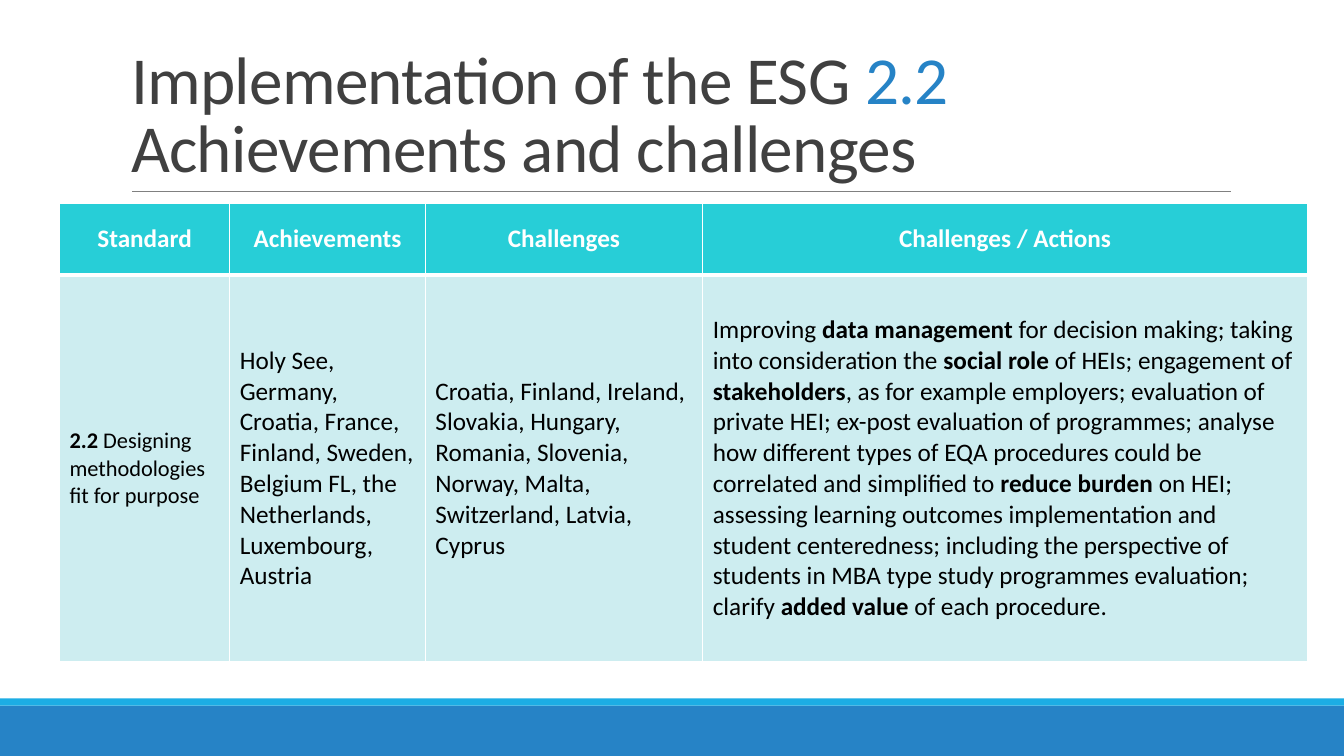
from dataclasses import dataclass

from lxml import etree
from pptx import Presentation
from pptx.dml.color import RGBColor
from pptx.enum.shapes import MSO_CONNECTOR, MSO_SHAPE
from pptx.enum.text import MSO_ANCHOR, MSO_AUTO_SIZE, PP_ALIGN
from pptx.oxml.ns import qn
from pptx.util import Cm, Pt

RECT = MSO_SHAPE.RECTANGLE
STRAIGHT = MSO_CONNECTOR.STRAIGHT
MIDDLE, BOTTOM = MSO_ANCHOR.MIDDLE, MSO_ANCHOR.BOTTOM
LEFT, CENTER = PP_ALIGN.LEFT, PP_ALIGN.CENTER
NO_FIT = MSO_AUTO_SIZE.NONE


@dataclass(frozen=True)
class Theme:
    font: str = "Calibri"
    title: str = "404040"
    blue: str = "2683C6"
    sky: str = "1CADE4"
    rule: str = "808080"
    header: str = "27CED7"
    body: str = "CDEDF0"
    white: str = "FFFFFF"
    black: str = "000000"
    title_size: float = 48
    text_size: float = 18
    label_size: float = 16
    thin: float = 1
    thick: float = 3


@dataclass(frozen=True)
class Band:
    top: float
    height: float
    color: str


@dataclass(frozen=True)
class Span:
    text: str
    bold: bool = False


@dataclass(frozen=True)
class Column:
    width: float
    heading: str
    body: list[Span]
    size: float


THEME = Theme()
SLIDE_W, SLIDE_H = 33.87, 19.05
BANDS = [Band(17.78, 1.27, THEME.blue), Band(17.6, 0.18, THEME.sky)]
TITLE = [
    ("Implementation of the ESG ", THEME.title),
    ("2.2", THEME.blue),
    (" Achievements and challenges", THEME.title),
]
ROW_HEIGHTS = [1.8, 9.75]
COLUMNS = [
    Column(4.29, "Standard", [
        Span("2.2 ", True),
        Span("Designing methodologies fit for purpose"),
    ], THEME.label_size),
    Column(4.93, "Achievements", [
        Span("Holy See, Germany, Croatia, France, Finland, Sweden, "
             "Belgium FL, the Netherlands, Luxembourg, Austria"),
    ], THEME.text_size),
    Column(6.99, "Challenges", [
        Span("Croatia, Finland, Ireland, Slovakia, Hungary, Romania, "
             "Slovenia, Norway, Malta, Switzerland, Latvia, Cyprus"),
    ], THEME.text_size),
    Column(15.24, "Challenges / Actions", [
        Span("Improving "),
        Span("data management ", True),
        Span("for decision making; taking into consideration the "),
        Span("social role ", True),
        Span("of HEIs; engagement of "),
        Span("stakeholders", True),
        Span(", as for example employers; evaluation of private HEI; "
             "ex-post evaluation of programmes; analyse how different types "
             "of EQA procedures could be correlated and simplified to "),
        Span("reduce burden ", True),
        Span("on HEI; assessing learning outcomes implementation and student "
             "centeredness; including the perspective of students in MBA type "
             "study programmes evaluation; clarify "),
        Span("added value ", True),
        Span("of each procedure."),
    ], THEME.text_size),
]


def add_run(p, text: str, size: float, color: str, bold: bool = False):
    r = p.add_run()
    r.text = text
    r.font.name = THEME.font
    r.font.size = Pt(size)
    r.font.bold = bold
    r.font.color.rgb = RGBColor.from_string(color)
    return r


def add_band(s, band: Band) -> None:
    sp = s.shapes.add_shape(RECT, 0, Cm(band.top), Cm(SLIDE_W), Cm(band.height))
    sp.shadow.inherit = False
    sp.fill.solid()
    sp.fill.fore_color.rgb = RGBColor.from_string(band.color)
    sp.line.fill.background()


def add_rule(s) -> None:
    line = s.shapes.add_connector(STRAIGHT, Cm(3.33), Cm(4.83), Cm(31.01), Cm(4.83))
    line.line.color.rgb = RGBColor.from_string(THEME.rule)
    line.line.width = Pt(0.5)
    etree.SubElement(line._element.spPr, qn("a:effectLst"))


def fill_title(s) -> None:
    sp = s.shapes.title
    sp.left, sp.top, sp.width, sp.height = Cm(3.05), Cm(0.79), Cm(27.94), Cm(4.04)
    tf = sp.text_frame
    tf.word_wrap = True
    tf.auto_size = NO_FIT
    tf.vertical_anchor = BOTTOM
    p = tf.paragraphs[0]
    p.alignment = LEFT
    p.line_spacing = 0.85
    for text, color in TITLE:
        r = add_run(p, text, THEME.title_size, color)
        r.font._element.set("spc", "-50")


def set_borders(cell, top: float, bottom: float) -> None:
    tc_pr = cell._tc.get_or_add_tcPr()
    widths = {"lnL": THEME.thin, "lnR": THEME.thin, "lnT": top, "lnB": bottom}
    for tag, width in widths.items():
        ln = etree.SubElement(tc_pr, qn(f"a:{tag}"), w=str(Pt(width)))
        fill = etree.SubElement(ln, qn("a:solidFill"))
        etree.SubElement(fill, qn("a:srgbClr"), val=THEME.white)


def fill_cell(cell, spans: list[Span], size: float, color: str, fill: str,
              align: PP_ALIGN) -> None:
    cell.vertical_anchor = MIDDLE
    cell.fill.solid()
    cell.fill.fore_color.rgb = RGBColor.from_string(fill)
    p = cell.text_frame.paragraphs[0]
    p.alignment = align
    for span in spans:
        add_run(p, span.text, size, color, span.bold)


def add_standards_table(s) -> None:
    width = sum(col.width for col in COLUMNS)
    table = s.shapes.add_table(len(ROW_HEIGHTS), len(COLUMNS), Cm(1.5), Cm(5.13),
                               Cm(width), Cm(sum(ROW_HEIGHTS))).table
    for row, height in zip(table.rows, ROW_HEIGHTS):
        row.height = Cm(height)
    for i, col in enumerate(COLUMNS):
        table.columns[i].width = Cm(col.width)
        head, body = table.cell(0, i), table.cell(1, i)
        set_borders(head, THEME.thin, THEME.thick)
        set_borders(body, THEME.thick, THEME.thin)
        fill_cell(head, [Span(col.heading, True)], THEME.text_size,
                  THEME.white, THEME.header, CENTER)
        fill_cell(body, col.body, col.size, THEME.black, THEME.body, LEFT)


def main() -> None:
    prs = Presentation()
    prs.slide_width, prs.slide_height = Cm(SLIDE_W), Cm(SLIDE_H)
    s = prs.slides.add_slide(prs.slide_layouts[5])

    # Footer bands and title rule
    for band in BANDS:
        add_band(s, band)
    add_rule(s)

    # Title and table
    fill_title(s)
    add_standards_table(s)
    prs.save("out.pptx")


if __name__ == "__main__":
    main()
